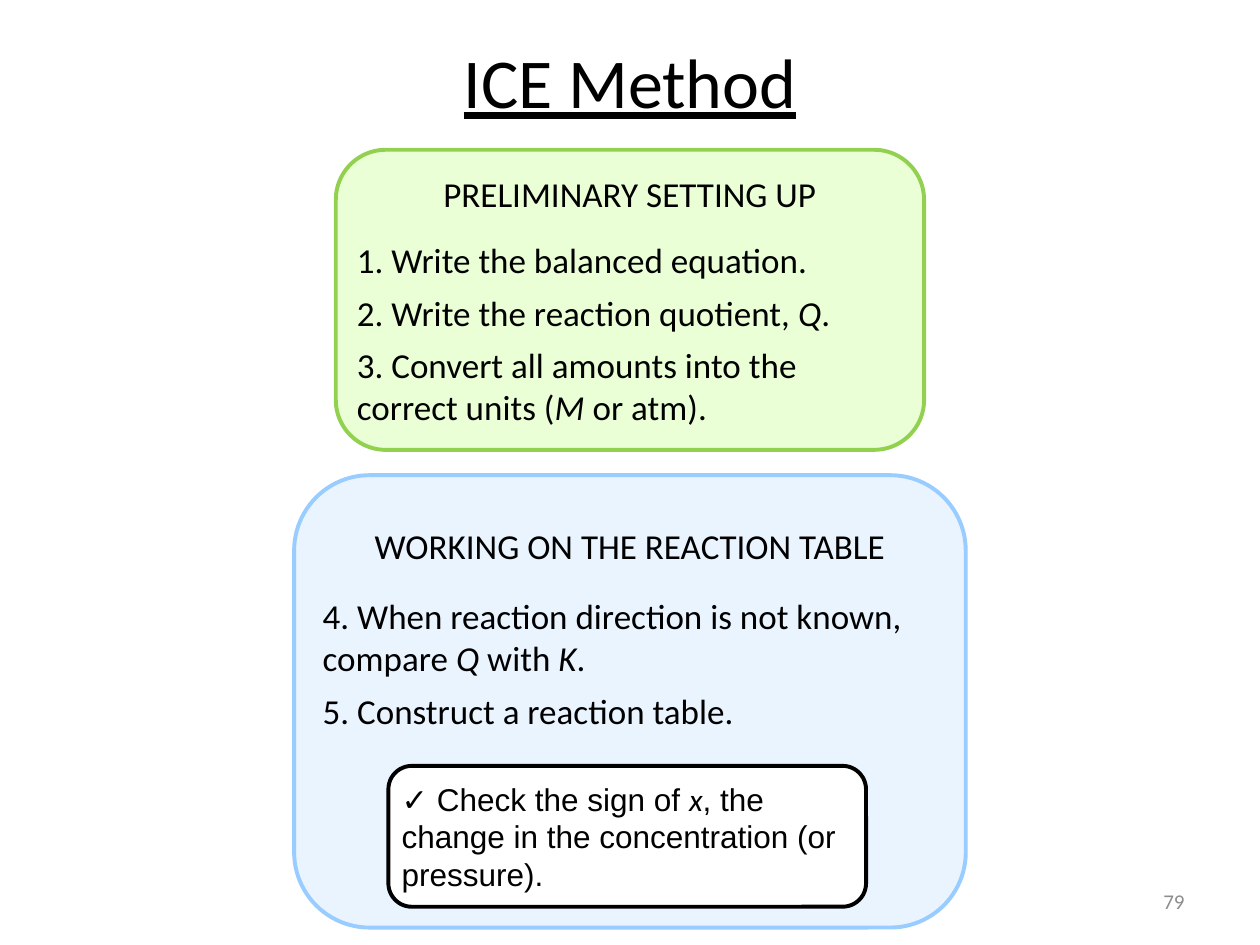
"""Build the ICE Method slide with python-pptx."""
from dataclasses import dataclass

from lxml import etree
from pptx import Presentation
from pptx.dml.color import RGBColor
from pptx.enum.shapes import MSO_SHAPE
from pptx.enum.text import MSO_ANCHOR, MSO_AUTO_SIZE, PP_ALIGN
from pptx.oxml.ns import qn
from pptx.util import Cm, Pt

ROUNDED = MSO_SHAPE.ROUNDED_RECTANGLE
MIDDLE = MSO_ANCHOR.MIDDLE
NO_FIT = MSO_AUTO_SIZE.NONE
LEFT, CENTER, RIGHT = PP_ALIGN.LEFT, PP_ALIGN.CENTER, PP_ALIGN.RIGHT
TITLE_ONLY = 5


@dataclass(frozen=True)
class Theme:
    """Colours, fonts and type sizes of the slide."""
    text: str = "000000"
    muted: str = "8C8C8C"
    white: str = "FFFFFF"
    lime: str = "99FF33"
    green: str = "92D050"
    blue: str = "99CCFF"
    font: str = "Calibri"
    note_font: str = "Arial"
    title_size: int = 40
    body_size: int = 20
    note_size: int = 18
    number_size: int = 12
    line_width: float = 2.25
    inset: float = 0.13
    tint: int = 20


class SlideBuilder:
    """Hold the theme and the current slide."""

    def __init__(self, slide, theme):
        self.slide = slide
        self.theme = theme

    def set_all(self, target, values):
        """Set each attribute of the target from a dict."""
        for name, value in values.items():
            setattr(target, name, value)

    def frame(self, tf, **margins):
        """Give a text frame its wrapping, anchor and margins."""
        self.set_all(tf, {"word_wrap": True, "auto_size": NO_FIT,
                          "vertical_anchor": MIDDLE, **margins})

    def fill_text(self, p, text, size, align=LEFT, before=0, after=0, color=None,
                  font=None, underline=None):
        """Fill a paragraph, with the words between asterisks in italics."""
        th = self.theme
        self.set_all(p, {"alignment": align, "space_before": Pt(before),
                         "space_after": Pt(after)})
        for i, part in enumerate(text.split("*")):
            italic = i % 2 == 1
            r = p.add_run()
            r.text = part
            self.set_all(r.font, {"name": th.font if italic else font or th.font,
                                  "size": Pt(size), "italic": italic,
                                  "underline": underline})
            r.font.color.rgb = RGBColor.from_string(color or th.text)

    def title(self, text, left, top, width, height):
        """Move and fill the title placeholder."""
        sp = self.slide.shapes.title
        self.set_all(sp, {"left": Cm(left), "top": Cm(top),
                          "width": Cm(width), "height": Cm(height)})
        self.frame(sp.text_frame)
        self.fill_text(sp.text_frame.paragraphs[0], text, self.theme.title_size,
                       CENTER, underline=True)

    def box(self, left, top, width, height, fill, line, alpha=None, bottom=0):
        """Add a rounded box and return its text frame."""
        th = self.theme
        sp = self.slide.shapes.add_shape(ROUNDED, Cm(left), Cm(top), Cm(width), Cm(height))
        sp.shadow.inherit = False
        sp.fill.solid()
        sp.fill.fore_color.rgb = RGBColor.from_string(fill)
        if alpha:
            color = sp._element.spPr.find(qn("a:solidFill"))[0]
            etree.SubElement(color, qn("a:alpha"), val=str(alpha * 1000))
        sp.line.color.rgb = RGBColor.from_string(line)
        sp.line.width = Pt(th.line_width)
        inset = Cm(th.inset)
        self.frame(sp.text_frame, margin_left=inset, margin_right=inset,
                   margin_top=inset, margin_bottom=Cm(th.inset + bottom))
        return sp.text_frame

    def steps(self, tf, heading, gap, items, start=1):
        """Fill a box with a centred heading and numbered steps."""
        size = self.theme.body_size
        self.fill_text(tf.paragraphs[0], heading, size, CENTER, gap, gap)
        for item in items:
            p = tf.add_paragraph()
            self.fill_text(p, f" {item}", size, before=6)
            etree.SubElement(p._p.get_or_add_pPr(), qn("a:buAutoNum"),
                             type="arabicPeriod", startAt=str(start))

    def note(self, tf, text):
        """Fill a box with a note."""
        th = self.theme
        self.fill_text(tf.paragraphs[0], text, th.note_size, LEFT, 10, 10,
                       font=th.note_font)

    def page_number(self, text, left, top, width, height):
        """Add the page number."""
        sp = self.slide.shapes.add_textbox(Cm(left), Cm(top), Cm(width), Cm(height))
        self.frame(sp.text_frame)
        self.fill_text(sp.text_frame.paragraphs[0], text, self.theme.number_size,
                       RIGHT, color=self.theme.muted)


def main():
    """Build and save the slide."""
    prs = Presentation()
    prs.slide_width, prs.slide_height = Cm(25.4), Cm(19.05)
    th = Theme()
    s = SlideBuilder(prs.slides.add_slide(prs.slide_layouts[TITLE_ONLY]), th)

    s.title("ICE Method", 1.27, 0.03, 22.86, 3.18)

    setup = s.box(6.77, 3.02, 11.86, 6.05, th.lime, th.green, th.tint)
    s.steps(setup, "PRELIMINARY SETTING UP", 8, [
        "Write the balanced equation.",
        "Write the reaction quotient, *Q*.",
        "Convert all amounts into the correct units (*M* or atm).",
    ])

    table = s.box(5.93, 9.58, 13.54, 9.12, th.blue, th.blue, th.tint, bottom=2.96)
    s.steps(table, "WORKING ON THE REACTION TABLE", 10, [
        "When reaction direction is not known, compare *Q* with *K*.",
        "Construct a reaction table.",
    ], start=4)

    check = s.box(7.83, 15.44, 9.63, 2.84, th.white, th.text)
    s.note(check, "✓ Check the sign of *x*, the change in the concentration (or pressure).")

    s.page_number("79", 18.2, 17.65, 5.93, 1.02)
    prs.save("out.pptx")


if __name__ == "__main__":
    main()
